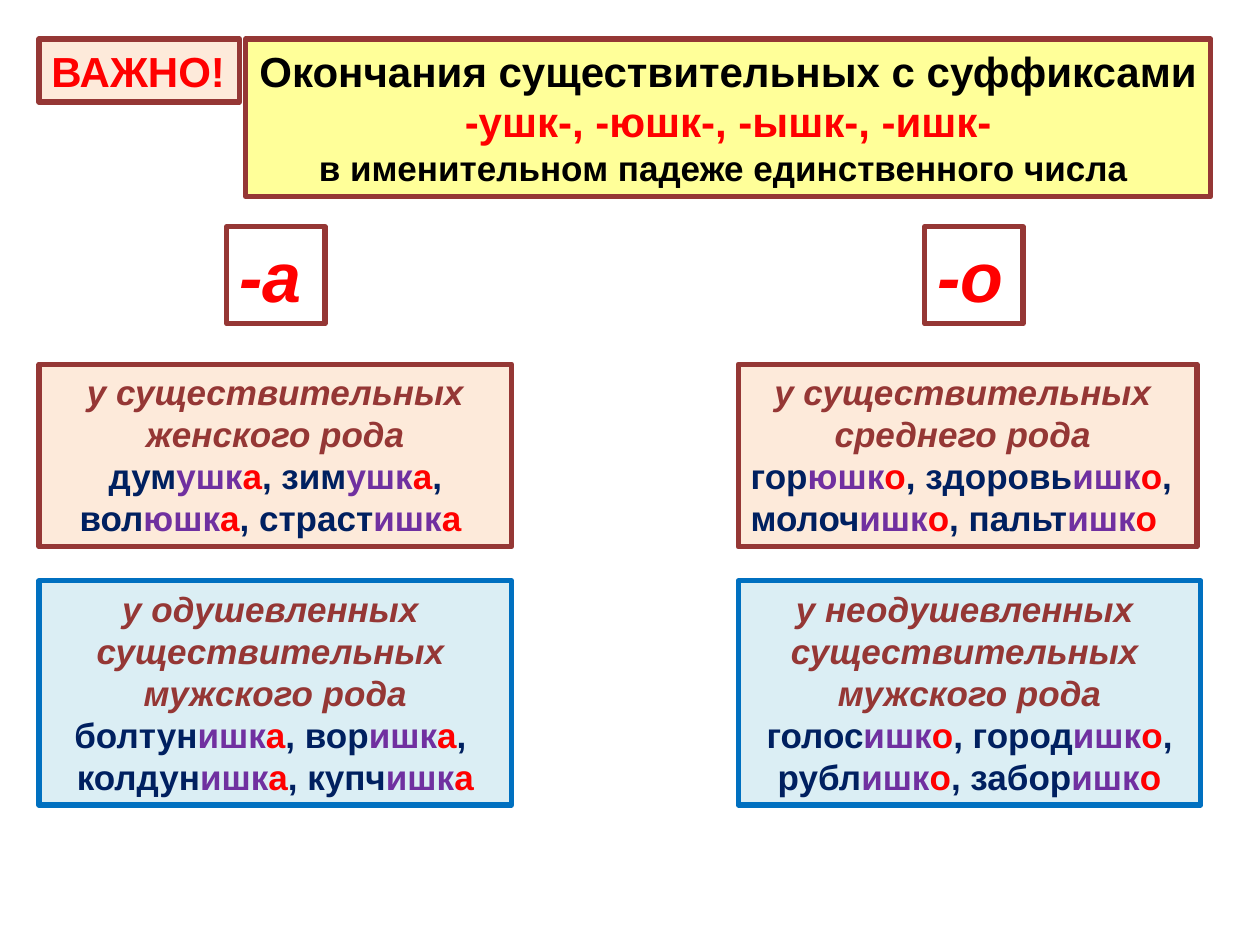
from dataclasses import dataclass
from itertools import cycle

from pptx import Presentation
from pptx.dml.color import RGBColor
from pptx.enum.text import MSO_AUTO_SIZE, PP_ALIGN
from pptx.util import Inches, Pt

LEFT, CENTER = PP_ALIGN.LEFT, PP_ALIGN.CENTER
FIT = MSO_AUTO_SIZE.SHAPE_TO_FIT_TEXT


@dataclass(frozen=True)
class Theme:
    font: str = "Arial"
    red: str = "FF0000"
    black: str = "000000"
    brown: str = "953735"
    navy: str = "002060"
    purple: str = "7030A0"
    blue: str = "0070C0"
    peach: str = "FDEADA"
    yellow: str = "FFFF99"
    pale_blue: str = "DBEEF4"
    body: int = 20
    title: int = 24
    ending: int = 40
    border: int = 3


theme = Theme()

deck = Presentation()
deck.slide_width, deck.slide_height = Inches(10), Inches(7.5)
page = deck.slides.add_slide(deck.slide_layouts[6])


def add_box(left, top, width, height, fill, line, wrap=True):
    box = page.shapes.add_textbox(Inches(left), Inches(top), Inches(width), Inches(height))
    if fill:
        box.fill.solid()
        box.fill.fore_color.rgb = RGBColor.from_string(fill)
    box.line.color.rgb = RGBColor.from_string(line)
    box.line.width = Pt(theme.border)
    box.text_frame.word_wrap = wrap
    box.text_frame.auto_size = FIT
    return box.text_frame


def add_line(frame, first, spans, size, align=CENTER, italic=False):
    """Add one paragraph made of (text, colour) spans."""
    para = frame.paragraphs[0] if first else frame.add_paragraph()
    para.alignment = align
    for text, color in spans:
        span = para.add_run()
        span.text = text
        span.font.name = theme.font
        span.font.size = Pt(size)
        span.font.bold = True
        span.font.italic = italic
        span.font.color.rgb = RGBColor.from_string(color)


margin, right_column = 0.31, 5.86

# Warning label and title
label = add_box(margin, 0.31, 1.59, 0.5, theme.peach, theme.brown, wrap=False)
add_line(label, True, [("ВАЖНО!", theme.red)], theme.title, LEFT)

title = add_box(1.95, 0.31, 7.66, 1.25, theme.yellow, theme.brown)
title_lines = [
    ("Окончания существительных с суффиксами ", theme.black, theme.title),
    ("-ушк-, -юшк-, -ышк-, -ишк-", theme.red, theme.title),
    ("в именительном падеже единственного числа ", theme.black, theme.body),
]
for index, (text, color, size) in enumerate(title_lines):
    add_line(title, index == 0, [(text, color)], size)

# Endings above the two columns
for left, ending in [(1.8, "-а"), (7.34, "-о")]:
    frame = add_box(left, 1.8, 0.78, 0.77, None, theme.brown)
    add_line(frame, True, [(ending, theme.red)], theme.ending, LEFT, italic=True)

# Rule cards: in the examples "|" separates stem, suffix and ending in turn
upper = (2.89, 1.45, theme.peach, theme.brown)
lower = (4.61, 1.78, theme.pale_blue, theme.blue)
cards = [
    (margin, 3.75, upper, True, CENTER,
     ["у существительных женского рода"],
     ["дум|ушк|а|, зим|ушк|а|, вол|юшк|а|, страст|ишк|а "]),
    (margin, 3.75, lower, True, CENTER,
     ["у одушевленных ", "существительных ", "мужского рода"],
     ["болтун|ишк|а|, вор|ишк|а|, ", "колдун|ишк|а|, купч|ишк|а"]),
    (right_column, 3.64, upper, False, LEFT,
     ["у существительных ", "среднего рода "],
     ["гор|юшк|о|, здоровь|ишк|о|,", "молоч|ишк|о|, пальт|ишк|о"]),
    (right_column, 3.67, lower, True, CENTER,
     ["у неодушевленных ", "существительных ", "мужского рода"],
     ["голос|ишк|о|, город|ишк|о|,", "рубл|ишк|о|, забор|ишк|о"]),
]
for left, width, (top, height, fill, line), wrap, align, headings, examples in cards:
    frame = add_box(left, top, width, height, fill, line, wrap)
    for index, heading in enumerate(headings):
        add_line(frame, index == 0, [(heading, theme.brown)], theme.body, italic=True)
    for example in examples:
        colors = cycle([theme.navy, theme.purple, theme.red])
        add_line(frame, False, zip(example.split("|"), colors), theme.body, align)

deck.save("out.pptx")
